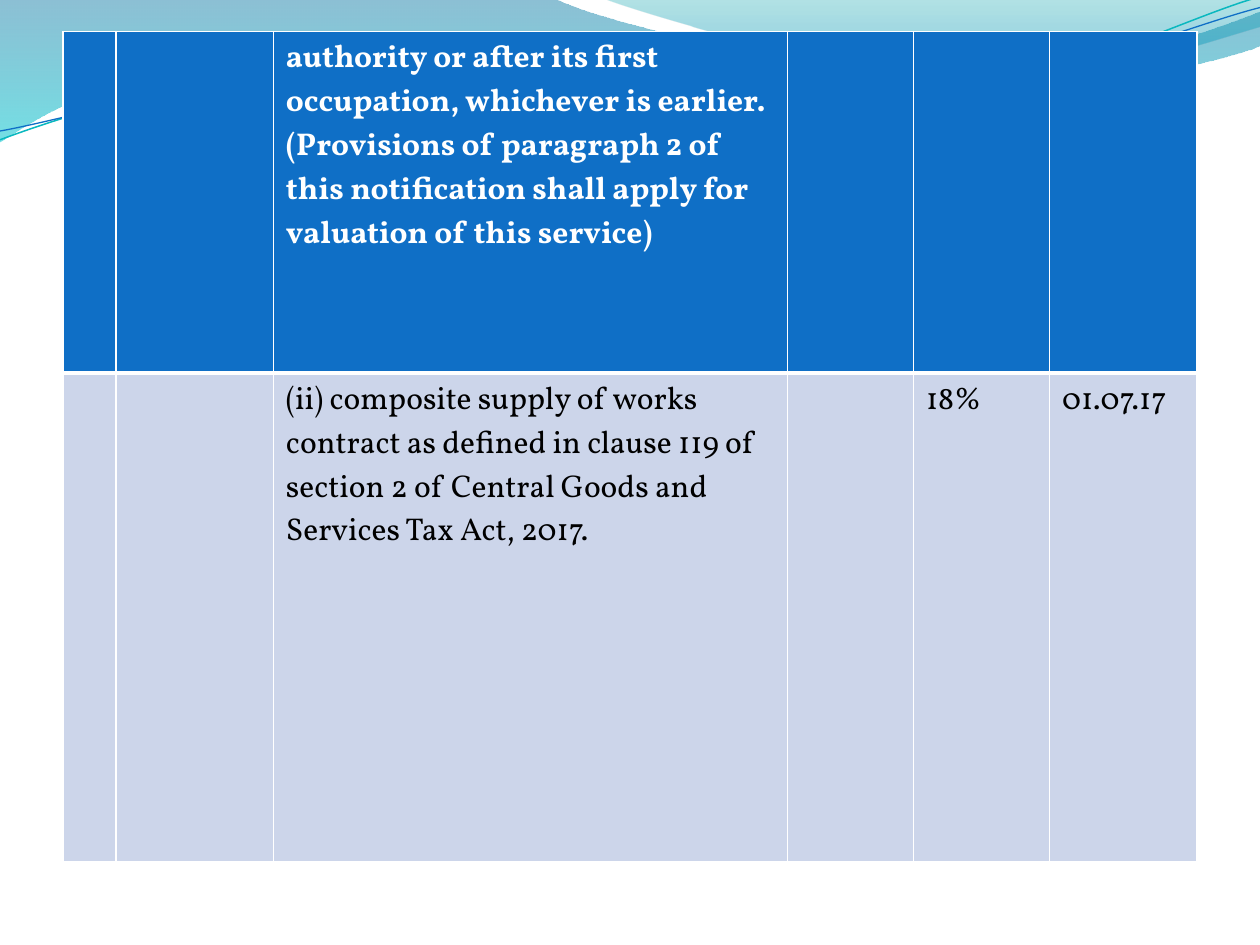
from dataclasses import dataclass
from lxml.etree import SubElement
from pptx import Presentation
from pptx.dml.color import RGBColor as Color
from pptx.oxml.ns import qn
from pptx.util import Inches, Pt


@dataclass(frozen=True)
class Theme:
    font: str = "Vollkorn"
    text_size: float = 18
    header_fill: str = "0F6FC6"
    body_fill: str = "CCD5EA"
    header_text: str = "FFFFFF"
    body_text: str = "000000"
    border: str = "FFFFFF"
    thin: float = 1
    thick: float = 3
    teal: str = "0AB8BF"
    blue: str = "0F6FC6"


THEME = Theme()

# Waves: a start point, then lines (2 numbers) and Bezier curves (6 numbers), in inches
LEFT_WAVE = [
    (0, 0), (4.4, -0.01),
    (4.76, 0.17, 6.64, 0.63, 7.58, 0.63), (8.53, 0.63, 9.58, 0.26, 10, 0.09),
    (10.01, 0.36),
    (9.83, 0.44, 8.7, 0.76, 7.46, 0.75), (6.22, 0.75, 3.82, 0.28, 2.57, 0.34),
    (1.29, 0.36, 0.46, 0.83, -0.01, 1.13), (0, 0),
]
RIGHT_WAVE = [
    (4.79, -0.01),
    (5.09, 0.11, 6.82, 0.62, 7.69, 0.65), (8.56, 0.69, 9.61, 0.32, 10, 0.21),
    (10, 0), (4.79, -0.01),
]
TEAL_STRAND = [
    (0, 1.11), (0.48, 0.93, 1.58, 0.57, 2.77, 0.52),
    (3.95, 0.47, 5.93, 0.89, 7.13, 0.8), (8.33, 0.71, 9.38, 0.15, 9.98, -0.02),
]
BLUE_STRAND = [
    (0, 1.04), (0.47, 0.96, 1.64, 0.61, 2.83, 0.56),
    (4.03, 0.51, 5.97, 0.84, 7.17, 0.75), (8.36, 0.67, 9.41, 0.21, 10, 0.06),
]

# Table content
COLUMNS = [0.42, 1.25, 4.08, 1, 1.08, 1.17]
ROWS = [2.71, 3.88]
HEADER = {
    2: ["authority or after its first occupation, whichever is earlier. "
        "(Provisions of paragraph 2 of this notification shall apply for "
        "valuation of this service)"],
}
BODY = {
    2: ["(ii) composite supply of works",
        "contract as defined in clause 119 of section 2 of "
        "Central Goods and Services Tax Act, 2017."],
    4: ["18%"],
    5: ["01.07.17"],
}


def bend_curves(shape, segments):
    """Join the three lines of each curve segment into one Bezier curve."""
    lines = iter(list(shape.element.spPr.iter(qn("a:lnTo"))))
    for segment in segments[1:]:
        group = [next(lines) for _ in range(len(segment) // 2)]
        if len(group) == 3:
            curve = group[0].makeelement(qn("a:cubicBezTo"))
            group[0].addprevious(curve)
            for line in group:
                curve.append(line[0])
                line.getparent().remove(line)


def add_outline(page, segments, close):
    points = [(Inches(segment[i]), Inches(segment[i + 1]))
              for segment in segments for i in range(0, len(segment), 2)]
    builder = page.shapes.build_freeform(*points[0])
    builder.add_line_segments(points[1:], close=close)
    shape = builder.convert_to_shape()
    bend_curves(shape, segments)
    shape.shadow.inherit = False
    return shape


def add_wave(page, segments, stops):
    """Filled wave; each stop is position, colour and opacity in percent."""
    shape = add_outline(page, segments, close=True)
    shape.line.fill.background()
    shape.fill.gradient()
    shape.fill.gradient_angle = 270
    for stop, (position, color, _) in zip(shape.fill.gradient_stops, stops):
        stop.position = position
        stop.color.rgb = Color.from_string(color)
    tints = shape.element.spPr.iter(qn("a:srgbClr"))
    for tint, (_, _, opacity) in zip(tints, stops):
        SubElement(tint, qn("a:alpha"), val=str(opacity * 1000))


def add_strand(page, segments, color, width):
    shape = add_outline(page, segments, close=False)
    shape.fill.background()
    shape.line.color.rgb = Color.from_string(color)
    shape.line.width = Pt(width)


def write_text(frame, paragraphs, *, color, bold=False):
    for index, text in enumerate(paragraphs):
        para = frame.add_paragraph() if index else frame.paragraphs[0]
        span = para.add_run()
        span.text = text
        span.font.name = THEME.font
        span.font.size = Pt(THEME.text_size)
        span.font.bold = bold
        span.font.color.rgb = Color.from_string(color)


def set_borders(cell, **widths):
    """Draw cell edges; they must come before the fill in the XML."""
    props = cell._tc.get_or_add_tcPr()
    for position, edge in enumerate("LRTB"):
        line = props.makeelement(qn(f"a:ln{edge}"), w=str(Pt(widths.get(edge, THEME.thin))))
        fill = SubElement(line, qn("a:solidFill"))
        SubElement(fill, qn("a:srgbClr"), val=THEME.border)
        props.insert(position, line)


def fill_row(row, texts, *, fill, color, bold, **edges):
    for index, cell in enumerate(row.cells):
        cell.fill.solid()
        cell.fill.fore_color.rgb = Color.from_string(fill)
        set_borders(cell, **edges)
        write_text(cell.text_frame, texts.get(index, []), color=color, bold=bold)


def add_rate_table(page):
    frame = page.shapes.add_table(
        len(ROWS), len(COLUMNS), Inches(0.5), Inches(0.25),
        Inches(sum(COLUMNS)), Inches(sum(ROWS)))
    table = frame.table
    for column, width in zip(table.columns, COLUMNS):
        column.width = Inches(width)
    for row, height in zip(table.rows, ROWS):
        row.height = Inches(height)
    header, body = table.rows
    fill_row(header, HEADER, fill=THEME.header_fill, color=THEME.header_text,
             bold=True, B=THEME.thick)
    fill_row(body, BODY, fill=THEME.body_fill, color=THEME.body_text,
             bold=False, T=THEME.thick)


def main():
    deck = Presentation()
    deck.slide_width, deck.slide_height = Inches(10), Inches(7.5)
    page = deck.slides.add_slide(deck.slide_layouts[6])

    # Waves along the top edge
    add_wave(page, LEFT_WAVE, [(0, "0074A1", 45), (1, "00C6CF", 55)])
    add_wave(page, RIGHT_WAVE, [(0, "00A1A9", 30), (0.8, "008BBF", 45)])
    add_strand(page, TEAL_STRAND, THEME.teal, 0.85)
    add_strand(page, BLUE_STRAND, THEME.blue, 0.75)

    # Tax rates
    add_rate_table(page)
    deck.save("out.pptx")


if __name__ == "__main__":
    main()
